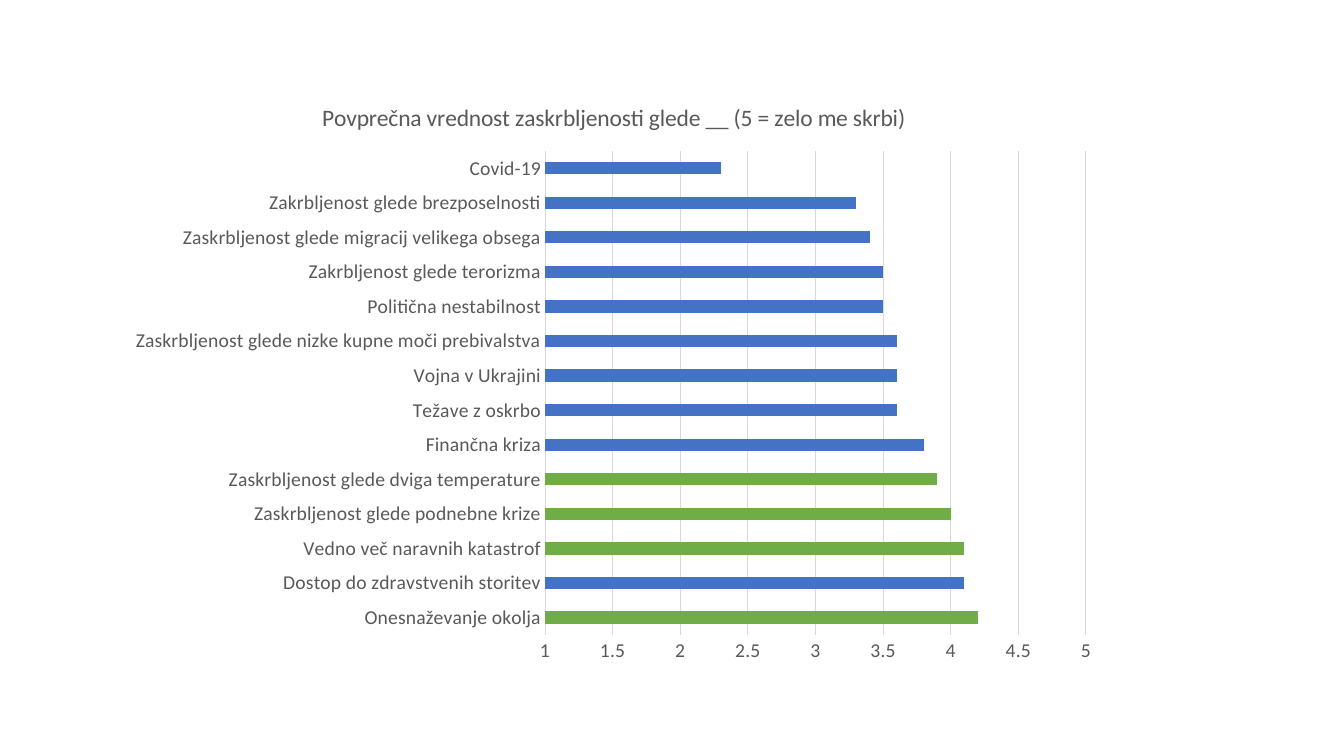
import pptx
import pptx.util
import pptx.chart.data
import pptx.dml.color
import pptx.enum.chart
import pptx.oxml

RGB = pptx.dml.color.RGBColor
BLUE = RGB(0x44, 0x72, 0xC4)
GREEN = RGB(0x70, 0xAD, 0x47)
GRAY = RGB(0x59, 0x59, 0x59)
PALE = RGB(0xD9, 0xD9, 0xD9)

TITLE = "Povprečna vrednost zaskrbljenosti glede __ (5 = zelo me skrbi)"
BARS = [  # label, mean, bar colour; from the bottom up
    ("Onesnaževanje okolja", 4.2, GREEN),
    ("Dostop do zdravstvenih storitev", 4.1, BLUE),
    ("Vedno več naravnih katastrof", 4.1, GREEN),
    ("Zaskrbljenost glede podnebne krize", 4.0, GREEN),
    ("Zaskrbljenost glede dviga temperature", 3.9, GREEN),
    ("Finančna kriza", 3.8, BLUE),
    ("Težave z oskrbo", 3.6, BLUE),
    ("Vojna v Ukrajini", 3.6, BLUE),
    ("Zaskrbljenost glede nizke kupne moči prebivalstva", 3.6, BLUE),
    ("Politična nestabilnost", 3.5, BLUE),
    ("Zakrbljenost glede terorizma", 3.5, BLUE),
    ("Zaskrbljenost glede migracij velikega obsega", 3.4, BLUE),
    ("Zakrbljenost glede brezposelnosti", 3.3, BLUE),
    ("Covid-19", 2.3, BLUE),
]
PX = pptx.util.Inches(1) / 100.8
CHART = (116, 80, 995, 597)
PLOT = (545, 151, 541, 484)


def style(font, size):
    font.name = "Calibri"
    font.size = pptx.util.Pt(size)
    font.bold = False
    font.color.rgb = GRAY


def rule(line):
    line.color.rgb = PALE
    line.width = pptx.util.Pt(0.75)


def place(chart):
    """Fix the inner plot area, as shares of the chart frame."""
    left, top, wide, high = CHART
    x, y, w, h = PLOT
    parts = {"x": (x - left) / wide, "y": (y - top) / high,
             "w": w / wide, "h": h / high}
    modes = '<c:layoutTarget val="inner"/><c:xMode val="edge"/><c:yMode val="edge"/>'
    sizes = "".join(f'<c:{k} val="{v:.4f}"/>' for k, v in parts.items())
    new = pptx.oxml.parse_xml(
        '<c:layout xmlns:c="http://schemas.openxmlformats.org/drawingml/2006/chart">'
        f"<c:manualLayout>{modes}{sizes}</c:manualLayout></c:layout>")
    area = chart.element.xpath("c:chart/c:plotArea")[0]
    for old in area.xpath("c:layout"):
        area.remove(old)
    area.insert(0, new)


def draw(slide):
    data = pptx.chart.data.CategoryChartData()
    data.categories = [name for name, _, _ in BARS]
    data.add_series("Series 1", [mean for _, mean, _ in BARS])
    kind = pptx.enum.chart.XL_CHART_TYPE.BAR_CLUSTERED
    box = [round(n * PX) for n in CHART]
    chart = slide.shapes.add_chart(kind, *box, data).chart
    style(chart.font, 14)
    chart.has_legend = False
    chart.has_title = True
    run = chart.chart_title.text_frame.paragraphs[0].add_run()
    run.text = TITLE
    style(run.font, 16.8)
    chart.chart_title.include_in_layout = False

    plot = chart.plots[0]
    plot.gap_width = 182
    plot.vary_by_categories = False
    bars = plot.series[0]
    bars.format.fill.solid()
    bars.format.fill.fore_color.rgb = BLUE
    for i, (_, _, color) in enumerate(BARS):
        if color != BLUE:
            fill = bars.points[i].format.fill
            fill.solid()
            fill.fore_color.rgb = color

    cats, vals = chart.category_axis, chart.value_axis
    for axis in (cats, vals):
        axis.major_tick_mark = pptx.enum.chart.XL_TICK_MARK.NONE
        axis.minor_tick_mark = pptx.enum.chart.XL_TICK_MARK.NONE
        style(axis.tick_labels.font, 14)
    rule(cats.format.line)
    vals.format.line.fill.background()
    vals.minimum_scale, vals.maximum_scale, vals.major_unit = 1, 5, 0.5
    vals.tick_labels.number_format = "General"
    vals.tick_labels.number_format_is_linked = False
    vals.has_major_gridlines = True
    rule(vals.major_gridlines.format.line)
    place(chart)


def main():
    deck = pptx.Presentation()
    deck.slide_width = round(1344 * PX)
    deck.slide_height = round(756 * PX)
    draw(deck.slides.add_slide(deck.slide_layouts[6]))
    deck.save("out.pptx")


if __name__ == "__main__":
    main()
